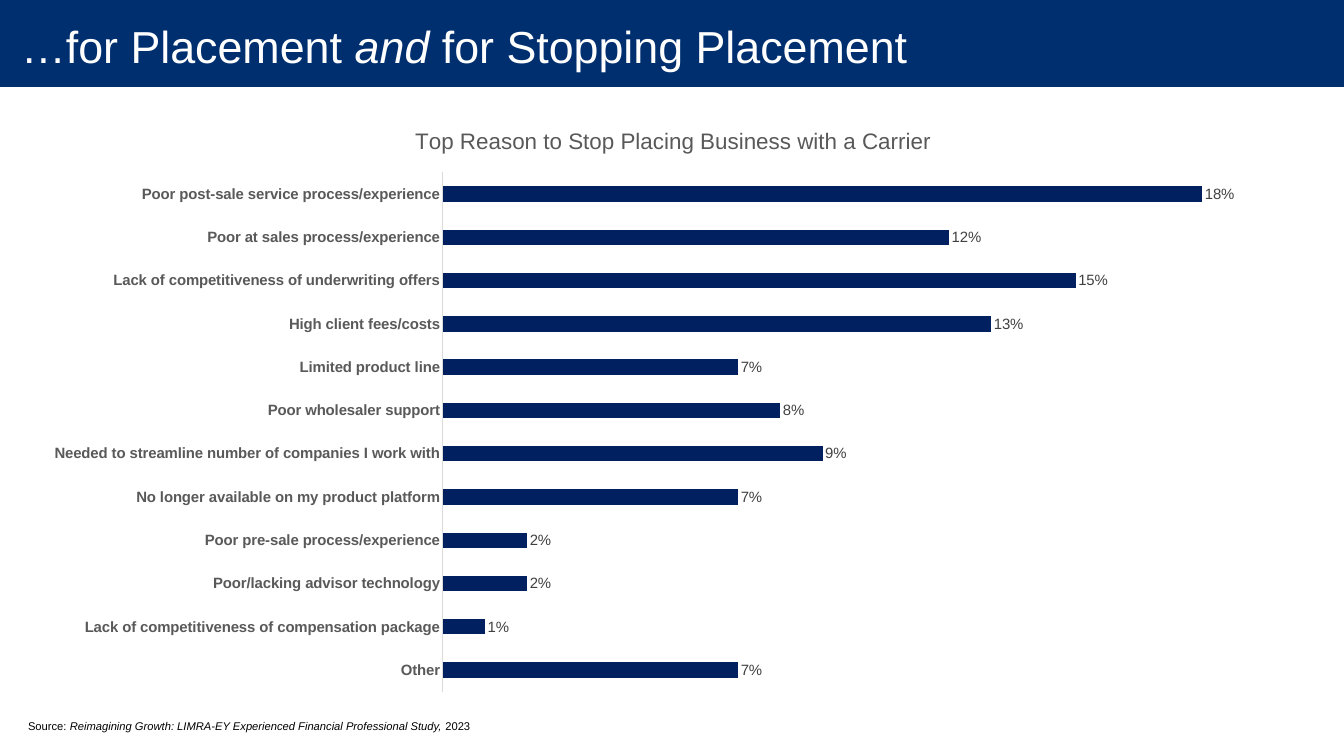
"""Build a slide with a bar chart of reasons to stop placing business with a carrier."""
from typing import NamedTuple

from lxml import etree
from pptx import Presentation
from pptx.chart import data
from pptx.dml.color import RGBColor
from pptx.enum import chart as kinds, shapes, text
from pptx.oxml import ns
from pptx.util import Pt

FONT = "Arial"


class Reason(NamedTuple):
    label: str
    share: float


class Span(NamedTuple):
    words: str
    italic: bool = False


REASONS = [
    Reason("Poor post-sale service process/experience", 0.18),
    Reason("Poor at sales process/experience", 0.12),
    Reason("Lack of competitiveness of underwriting offers", 0.15),
    Reason("High client fees/costs", 0.13),
    Reason("Limited product line", 0.07),
    Reason("Poor wholesaler support", 0.08),
    Reason("Needed to streamline number of companies I work with", 0.09),
    Reason("No longer available on my product platform", 0.07),
    Reason("Poor pre-sale process/experience", 0.02),
    Reason("Poor/lacking advisor technology", 0.02),
    Reason("Lack of competitiveness of compensation package", 0.01),
    Reason("Other", 0.07),
]
HEADLINE = [Span("…for Placement "), Span("and", True), Span(" for Stopping Placement")]
SOURCE = [
    Span("Source: "),
    Span("Reimagining Growth: LIMRA-EY Experienced Financial Professional Study, ", True),
    Span("2023"),
]
PLOT_AREA = {"x": 0.32, "y": 0.11, "w": 0.66, "h": 0.87}


def paint(target, color: str) -> None:
    """Give a fill a solid colour."""
    target.solid()
    target.fore_color.rgb = RGBColor.from_string(color)


def format_font(font, size: float, color: str, bold: bool = False, italic: bool = False) -> None:
    """Set the face, size, colour and style of a font."""
    font.name, font.size = FONT, Pt(size)
    font.bold, font.italic = bold, italic
    font.color.rgb = RGBColor.from_string(color)


def write(para, words: str, **style) -> None:
    """Add a formatted span of text to a paragraph."""
    span = para.add_run()
    span.text = words
    format_font(span.font, **style)


def write_spans(para, spans: list[Span], size: float, color: str) -> None:
    """Write a line of plain and italic spans."""
    para.alignment = text.PP_ALIGN.LEFT
    for span in spans:
        write(para, span.words, size=size, color=color, italic=span.italic)


def add_headline(page) -> None:
    """Place the title over a banner that spans the slide."""
    title = page.shapes.title
    banner = page.shapes.add_shape(shapes.MSO_SHAPE.RECTANGLE, 0, 0, Pt(1440), Pt(93))
    banner.shadow.inherit = False
    paint(banner.fill, "002F70")
    banner.line.fill.background()
    title.element.addprevious(banner.element)

    title.left, title.top, title.width, title.height = Pt(1), Pt(-4), Pt(1440), Pt(105)
    frame = title.text_frame
    frame.word_wrap = False
    frame.vertical_anchor = text.MSO_ANCHOR.MIDDLE
    frame.margin_left, frame.margin_right = Pt(21.6), Pt(14.4)
    frame.margin_top = frame.margin_bottom = 0
    write_spans(frame.paragraphs[0], HEADLINE, 48, "FFFFFF")


def set_plot_area(chart, area: dict[str, float]) -> None:
    """Fix the inner plot area as fractions of the chart."""
    plot_area = chart.element.find(".//" + ns.qn("c:plotArea"))
    for old in plot_area.findall(ns.qn("c:layout")):
        plot_area.remove(old)
    layout = etree.Element(ns.qn("c:layout"))
    manual = etree.SubElement(layout, ns.qn("c:manualLayout"))
    settings = {"layoutTarget": "inner", "xMode": "edge", "yMode": "edge", **area}
    for name, value in settings.items():
        etree.SubElement(manual, ns.qn(f"c:{name}"), val=str(value))
    plot_area.insert(0, layout)


def add_reason_chart(page) -> None:
    """Add the bar chart, with the first reason at the top."""
    rows = REASONS[::-1]
    table = data.CategoryChartData(number_format="0%")
    table.categories = [row.label for row in rows]
    table.add_series("Series 1", [row.share for row in rows])
    chart = page.shapes.add_chart(
        kinds.XL_CHART_TYPE.BAR_CLUSTERED, Pt(36), Pt(114.5), Pt(1370), Pt(639.5), table
    ).chart
    format_font(chart.font, 10, "000000")
    chart.has_legend = False
    chart.has_title = True
    write(chart.chart_title.text_frame.paragraphs[0],
          "Top Reason to Stop Placing Business with a Carrier", size=24, color="595959")
    chart.chart_title.include_in_layout = False
    set_plot_area(chart, PLOT_AREA)

    categories = chart.category_axis
    categories.major_tick_mark = categories.minor_tick_mark = kinds.XL_TICK_MARK.NONE
    categories.has_major_gridlines = False
    format_font(categories.tick_labels.font, 16, "595959", bold=True)
    paint(categories.format.line.fill, "D9D9D9")
    categories.format.line.width = Pt(0.75)

    values = chart.value_axis
    values.visible = values.has_major_gridlines = False
    values.minimum_scale, values.maximum_scale = 0, 0.2
    values.tick_labels.number_format = "0%"
    values.tick_labels.number_format_is_linked = False

    plot = chart.plots[0]
    plot.gap_width = 182
    plot.vary_by_categories = False
    series = plot.series[0]
    paint(series.format.fill, "002060")
    labels = series.data_labels
    labels.show_value = True
    labels.number_format, labels.number_format_is_linked = "0%", False
    labels.position = kinds.XL_LABEL_POSITION.OUTSIDE_END
    format_font(labels.font, 16, "404040")


def add_source(page) -> None:
    """Add the source line at the foot of the slide."""
    box = page.shapes.add_textbox(Pt(23), Pt(767), Pt(1169), Pt(21.6))
    box.text_frame.word_wrap = True
    box.text_frame.auto_size = text.MSO_AUTO_SIZE.SHAPE_TO_FIT_TEXT
    write_spans(box.text_frame.paragraphs[0], SOURCE, 12, "000000")


def main() -> None:
    """Build and save the deck."""
    deck = Presentation()
    deck.slide_width, deck.slide_height = Pt(1440), Pt(810)
    page = deck.slides.add_slide(deck.slide_layouts.get_by_name("Title Only"))
    add_headline(page)
    add_reason_chart(page)
    add_source(page)
    deck.save("out.pptx")


if __name__ == "__main__":
    main()
